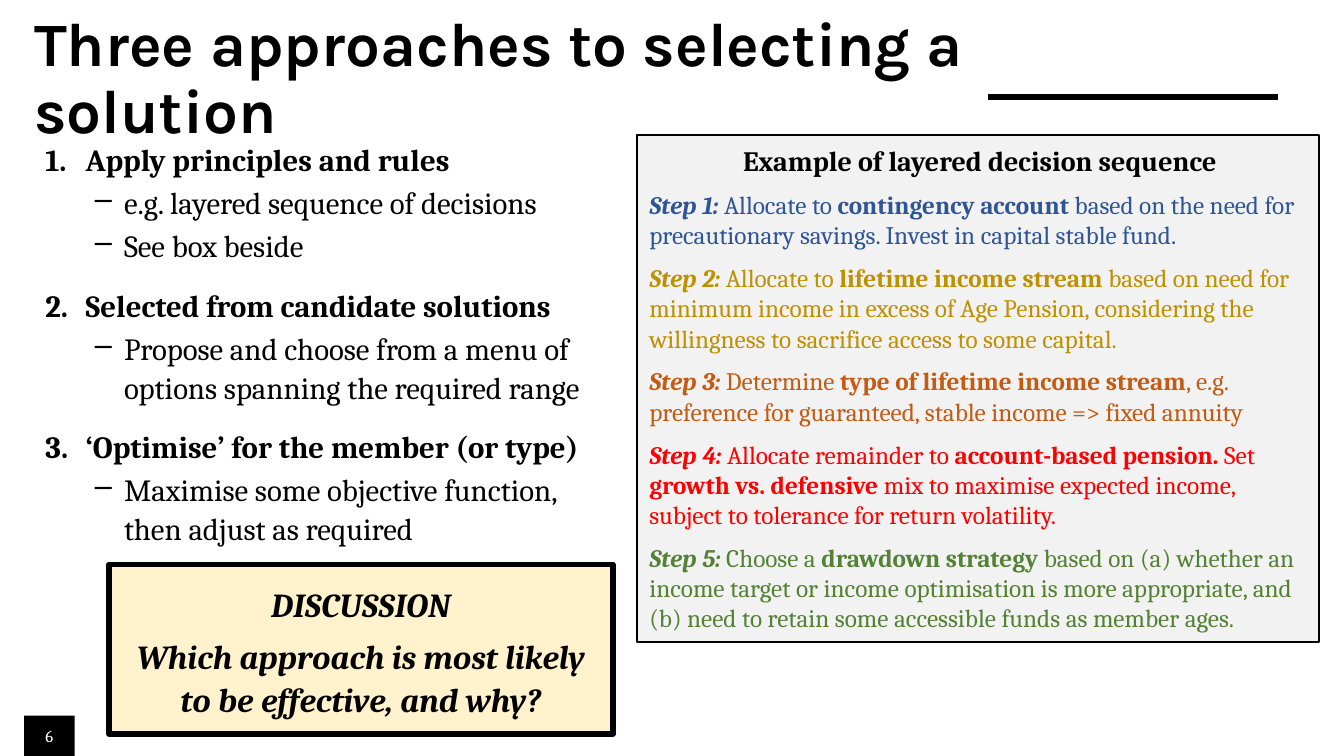
"""Build the slide on three approaches to selecting a solution."""
from dataclasses import dataclass

from lxml.etree import SubElement as Sub
from pptx import Presentation
from pptx.dml.color import RGBColor as Rgb
from pptx.enum.shapes import MSO_CONNECTOR as Link, MSO_SHAPE as Shape
from pptx.enum.text import MSO_ANCHOR as Anchor, MSO_AUTO_SIZE as Auto, PP_ALIGN as Align
from pptx.oxml.ns import qn
from pptx.util import Inches, Pt

TITLE = "Three approaches to selecting a solution"
PAGE = "6"
PLANS = [
    ("Apply principles and rules",
     ["e.g. layered sequence of decisions", "See box beside"]),
    ("Selected from candidate solutions",
     ["Propose and choose from a menu of options spanning the required range"]),
    ("‘Optimise’ for the member (or type)",
     ["Maximise some objective function, then adjust as required"]),
]
HEAD = "Example of layered decision sequence"
STEPS = [
    ("2F5597", "Allocate to *contingency account *based on the need for "
     "precautionary savings. Invest in capital stable fund."),
    ("BF9000", "Allocate to *lifetime income stream* based on need for minimum "
     "income in excess of Age Pension, considering the willingness to "
     "sacrifice access to some capital."),
    ("C55A11", "Determine *type of lifetime income stream*, e.g. preference "
     "for guaranteed, stable income => fixed annuity"),
    ("FF0000", "Allocate remainder to *account-based pension.* Set *growth vs. "
     "defensive *mix to maximise expected income, subject to tolerance for "
     "return volatility."),
    ("548235", "Choose a *drawdown strategy* based on (a) whether an income "
     "target or income optimisation is more appropriate, and (b) need to "
     "retain some accessible funds as member ages."),
]
TALK = ["DISCUSSION", "Which approach is most likely to be effective, and why?"]


@dataclass(frozen=True)
class Theme:
    """Colours, fonts and type sizes."""
    ink: str = "000000"
    paper: str = "FFFFFF"
    panel: str = "F2F2F2"
    cream: str = "FFF2CC"
    display: str = "Karla"
    body: str = "Cambria"
    title: int = 44
    talk: int = 24
    plan: int = 22
    head: int = 20
    step: int = 18
    page: int = 12


T = Theme()


def write(frame, text, size, font=T.body, color=T.ink, lead="", bold=False,
          slant=False, align=Align.LEFT, line=1.0, before=0, after=0,
          level=0, indent=None, bullet=None):
    """Add a paragraph; asterisks switch bold on and off."""
    first = frame.paragraphs[0]
    para = frame.add_paragraph() if first.runs else first
    para.alignment, para.line_spacing, para.level = align, line, level
    para.space_before, para.space_after = Pt(before), Pt(after)
    if bullet:
        props = para._p.get_or_add_pPr()
        left, hang = indent
        props.set("marL", str(Inches(left)))
        props.set("indent", str(Inches(hang)))
        tag, key, value = bullet
        Sub(props, qn(tag)).set(key, value)
    parts = [(lead, True, True)]
    parts += [(part, bold or i % 2 == 1, slant)
              for i, part in enumerate(text.split("*"))]
    for part, heavy, tilt in parts:
        if part:
            run = para.add_run()
            run.text = part
            face = run.font
            face.name, face.size = font, Pt(size)
            face.bold, face.italic = heavy, tilt
            face.color.rgb = Rgb.from_string(color)


def setup(shape, pads, anchor):
    """Prepare the text frame of a shape."""
    frame = shape.text_frame
    frame.word_wrap, frame.auto_size = True, Auto.NONE
    frame.vertical_anchor = anchor
    (frame.margin_left, frame.margin_top,
     frame.margin_right, frame.margin_bottom) = map(Inches, pads)
    return frame


def label(slide, at, pads, anchor=Anchor.TOP):
    """Add a text box."""
    return setup(slide.shapes.add_textbox(*map(Inches, at)), pads, anchor)


def block(slide, at, fill, pads, width=0, anchor=Anchor.TOP):
    """Add a filled rectangle."""
    shape = slide.shapes.add_shape(Shape.RECTANGLE, *map(Inches, at))
    shape.shadow.inherit = False
    shape.fill.solid()
    shape.fill.fore_color.rgb = Rgb.from_string(fill)
    if width:
        shape.line.color.rgb = Rgb.from_string(T.ink)
        shape.line.width = Pt(width)
    else:
        shape.line.fill.background()
    return setup(shape, pads, anchor)


def main():
    """Lay out and save the slide."""
    deck = Presentation()
    deck.slide_width, deck.slide_height = Inches(13.33), Inches(7.5)
    slide = deck.slides.add_slide(deck.slide_layouts[6])
    plain = (0.1, 0.05, 0.1, 0.05)

    title = label(slide, (0.24, 0.3, 11.5, 0.99), plain, Anchor.MIDDLE)
    write(title, TITLE, T.title, font=T.display, bold=True, line=0.9)

    page = block(slide, (0.24, 7.1, 0.5, 0.4), T.ink, plain, anchor=Anchor.MIDDLE)
    write(page, PAGE, T.page, color=T.paper, align=Align.CENTER)

    rule = slide.shapes.add_connector(
        Link.STRAIGHT, *map(Inches, (9.8, 0.96, 12.68, 0.96)))
    rule.line.color.rgb = Rgb.from_string(T.ink)
    rule.line.width = Pt(4.5)
    Sub(rule._element.spPr, qn("a:effectLst"))

    plans = label(slide, (0.41, 1.34, 5.68, 4.51), (0.04,) * 4)
    for i, (name, notes) in enumerate(PLANS):
        write(plans, name, T.plan, bold=True, line=1.05, before=15 if i else 0,
              indent=(0.4, -0.4), bullet=("a:buAutoNum", "type", "arabicPeriod"))
        for note in notes:
            write(plans, note, T.plan, line=1.05, before=3, level=1,
                  indent=(0.78, -0.29), bullet=("a:buChar", "char", "–"))

    steps = block(slide, (6.32, 1.34, 6.76, 5.03), T.panel,
                  (0.12, 0.08, 0.08, 0.08), 1.5)
    write(steps, HEAD, T.head, bold=True, align=Align.CENTER)
    for i, (color, text) in enumerate(STEPS, 1):
        write(steps, " " + text, T.step, color=color, lead=f"Step {i}:", before=9)

    talk = block(slide, (1.08, 5.6, 5, 1.68), T.cream, (0.12, 0.16, 0.12, 0.16), 4)
    for text, after in zip(TALK, (6, 0)):
        write(talk, text, T.talk, bold=True, slant=True, align=Align.CENTER,
              line=1.08, after=after)

    deck.save("out.pptx")


if __name__ == "__main__":
    main()
